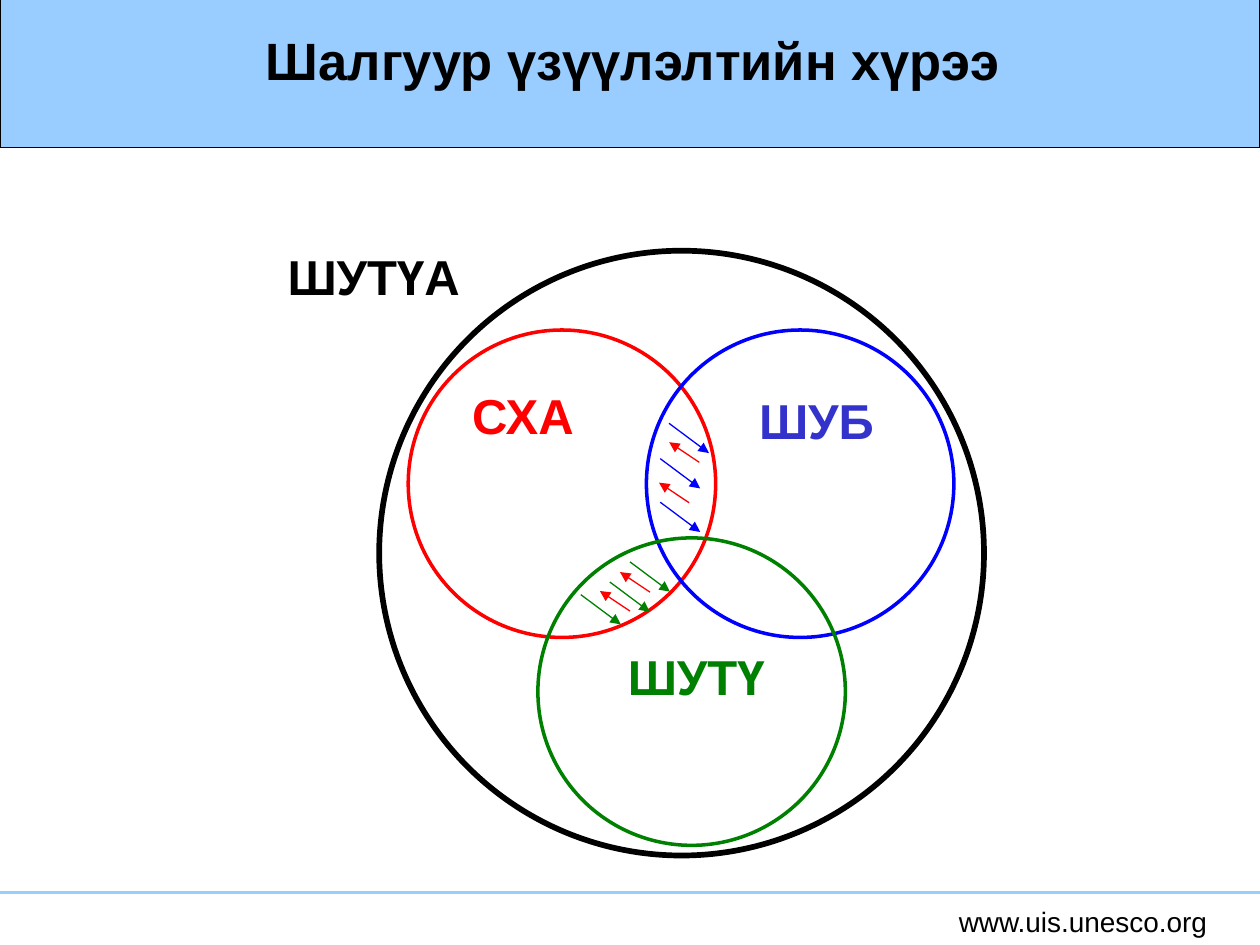
from lxml import etree
from pptx import Presentation
from pptx.dml.color import RGBColor
from pptx.enum.shapes import MSO_CONNECTOR, MSO_SHAPE
from pptx.enum.text import MSO_ANCHOR, PP_ALIGN
from pptx.oxml.ns import qn
from pptx.util import Pt

STRAIGHT = MSO_CONNECTOR.STRAIGHT
RECTANGLE = MSO_SHAPE.RECTANGLE
ELLIPSE = MSO_SHAPE.OVAL
MIDDLE = MSO_ANCHOR.MIDDLE
TOP = MSO_ANCHOR.TOP
LEFT = PP_ALIGN.LEFT
CENTER = PP_ALIGN.CENTER

FONT = "Arial"
SKY, BLACK, RED, BLUE, GREEN, INDIGO = (
    "99CCFF", "000000", "FF0000", "0000FF", "008000", "3333CC")

FIELD_DIAMETER = 175.7
FIELDS = [
    ("СХА", (233.3, 188.6), RED, (256.3, 216.7, 85), RED),
    ("ШУБ", (369.4, 188.6), BLUE, (382.3, 219.6, 168.5), INDIGO),
    ("ШУТҮ", (307.4, 307.4), GREEN, (309.6, 365.8, 176.4), GREEN),
]
LABEL_HEIGHT = 41

OUTWARD = (22.8, 17)
BACK = (-17.2, -11.5)
FLOWS = [
    (BLUE, OUTWARD, [(382.3, 241.9), (377.3, 262.1), (377.3, 287)]),
    (RED, BACK, [(399.6, 264.2), (393.8, 287.3)]),
    (GREEN, OUTWARD, [(360, 321.1), (348.5, 332.6), (331.9, 339.8)]),
    (RED, BACK, [(371.5, 338.4), (360, 349.2)]),
]


def rgb(code):
    return RGBColor.from_string(code)


def write(frame, text, size, color, bold=True, align=CENTER, anchor=TOP):
    frame.vertical_anchor = anchor
    frame.margin_left = frame.margin_right = Pt(7.2)
    frame.margin_top = frame.margin_bottom = Pt(3.6)
    paragraph = frame.paragraphs[0]
    paragraph.alignment = align
    run = paragraph.add_run()
    run.text = text
    run.font.name = FONT
    run.font.size = Pt(size)
    run.font.bold = bold
    run.font.color.rgb = rgb(color)


def add_label(shapes, box, text, size, color, bold=True, wrap=True):
    label = shapes.add_textbox(*map(Pt, box))
    label.text_frame.word_wrap = wrap
    write(label.text_frame, text, size, color, bold)


def add_outline(shapes, kind, box, color, width, fill=None):
    outline = shapes.add_shape(kind, *map(Pt, box))
    outline.shadow.inherit = False
    if fill:
        outline.fill.solid()
        outline.fill.fore_color.rgb = rgb(fill)
    else:
        outline.fill.background()
    outline.line.color.rgb = rgb(color)
    outline.line.width = Pt(width)


def add_line(shapes, start, end, color, width, arrow=False):
    line = shapes.add_connector(STRAIGHT, *map(Pt, (*start, *end)))
    line.line.color.rgb = rgb(color)
    line.line.width = Pt(width)
    if arrow:
        etree.SubElement(line.line._get_or_add_ln(), qn("a:tailEnd"), type="triangle")
    etree.SubElement(line._element.spPr, qn("a:effectLst"))


def add_title(slide, text):
    title = slide.shapes.title
    title.left, title.top, title.width, title.height = map(Pt, (144.7, -2, 557.3, 72))
    title.fill.solid()
    title.fill.fore_color.rgb = rgb(SKY)
    title.text_frame.word_wrap = True
    write(title.text_frame, text, 30, BLACK, align=LEFT, anchor=MIDDLE)
    slide.shapes._spTree.append(title._element)


def add_fields(slide):
    fields = slide.shapes.add_group_shape().shapes
    for name, corner, outline, place, color in FIELDS:
        add_outline(fields, ELLIPSE, (*corner, FIELD_DIAMETER, FIELD_DIAMETER), outline, 2)
        add_label(fields, (*place, LABEL_HEIGHT), name, 28, color)


def add_scope(slide):
    scope = slide.shapes.add_group_shape().shapes
    add_outline(scope, ELLIPSE, (216.7, 143.3, 345.6, 345.6), BLACK, 3.25)
    add_label(scope, (140.4, 137.5, 146.2, LABEL_HEIGHT), "ШУТҮА", 28, BLACK)


def add_flows(slide):
    flows = slide.shapes.add_group_shape().shapes
    for color, (dx, dy), starts in FLOWS:
        for x, y in starts:
            add_line(flows, (x, y), (x + dx, y + dy), color, 0.75, arrow=True)


def main():
    deck = Presentation()
    deck.slide_width, deck.slide_height = Pt(720), Pt(540)
    slide = deck.slides.add_slide(deck.slide_layouts[5])
    add_outline(slide.shapes, RECTANGLE, (0, -5.8, 720, 90), BLACK, 0.75, fill=SKY)
    add_line(slide.shapes, (0, 510), (720, 510), SKY, 2.25)
    add_label(slide.shapes, (540, 513.4, 157.7, 26.6), "www.uis.unesco.org",
              16, BLACK, bold=False, wrap=False)
    add_title(slide, "Шалгуур үзүүлэлтийн хүрээ")
    add_fields(slide)
    add_scope(slide)
    add_flows(slide)
    deck.save("out.pptx")


if __name__ == "__main__":
    main()
